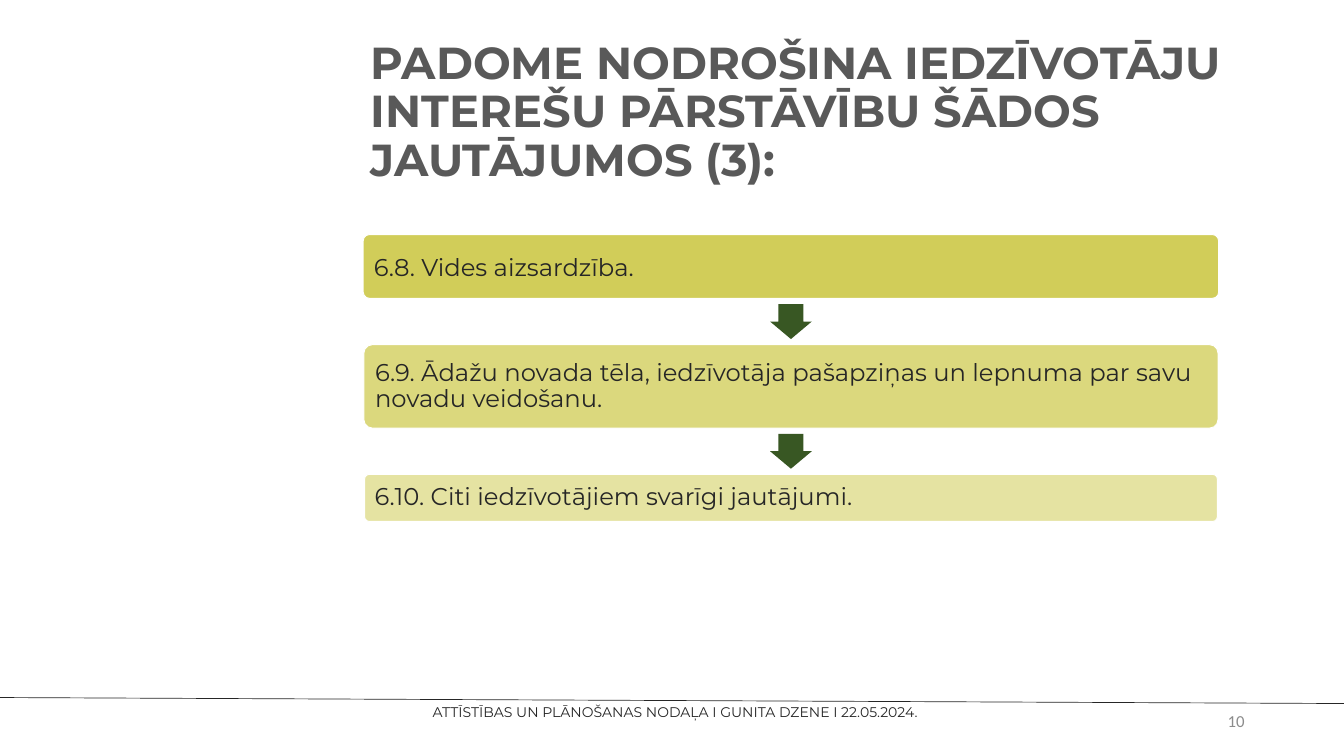
from pptx import Presentation
from pptx import util as u
from pptx.dml.color import RGBColor
from pptx.enum import shapes, text
from pptx.oxml.ns import qn
from lxml import etree

TITLE = "PADOME NODROŠINA IEDZĪVOTĀJU INTEREŠU PĀRSTĀVĪBU ŠĀDOS JAUTĀJUMOS (3):"
FOOTER = "ATTĪSTĪBAS UN PLĀNOŠANAS NODAĻA I GUNITA DZENE I 22.05.2024."
PAGE = "10"
STEPS = [
    ("6.8. Vides aizsardzība.", 12.73, 0.95, 90, 1.0),
    ("6.9. Ādažu novada tēla, iedzīvotāja pašapziņas un lepnuma par savu "
     "novadu veidošanu.", 12.71, 1.24, 70, 0.9),
    ("6.10. Citi iedzīvotājiem svarīgi jautājumi.", 12.69, 0.7, 50, 0.9),
]

OLIVE = RGBColor(0xCD, 0xC8, 0x47)
GREEN = RGBColor(0x38, 0x57, 0x23)
DARK = RGBColor(0x26, 0x26, 0x26)
GREY = RGBColor(0x59, 0x59, 0x59)
LIGHT_GREY = RGBColor(0x8C, 0x8C, 0x8C)
WHITE = RGBColor(0xFF, 0xFF, 0xFF)

CENTER, TOP, GAP = 11.77, 3.49, 0.69
ARROW_W, ARROW_H = 0.62, 0.52


def write(sp, words, size, color, align, anchor, inset=(0.1, 0.05),
          font="Montserrat", bold=False):
    tf = sp.text_frame
    tf.word_wrap = True
    tf.auto_size = text.MSO_AUTO_SIZE.NONE
    tf.vertical_anchor = anchor
    tf.margin_left = tf.margin_right = u.Inches(inset[0])
    tf.margin_top = tf.margin_bottom = u.Inches(inset[1])
    p = tf.paragraphs[0]
    p.text = words
    p.alignment = align
    p.font.name, p.font.size, p.font.bold = font, u.Pt(size), bold
    p.font.color.rgb = color
    return p


def add_shape(s, kind, x, y, w, h, color):
    sp = s.shapes.add_shape(kind, *map(u.Inches, (x, y, w, h)))
    sp.shadow.inherit = False
    sp.fill.solid()
    sp.fill.fore_color.rgb = color
    return sp


def add_step(s, y, words, w, h, opacity, spacing):
    sp = add_shape(s, shapes.MSO_SHAPE.ROUNDED_RECTANGLE, CENTER - w / 2, y, w, h, OLIVE)
    sp.adjustments[0] = 0.1
    clr = sp.fill._xPr.find(qn("a:solidFill"))[0]
    etree.SubElement(clr, qn("a:alpha"), val=str(opacity * 1000))
    sp.line.color.rgb = WHITE
    sp.line.width = u.Pt(1)
    p = write(sp, words, 26, DARK, text.PP_ALIGN.LEFT, text.MSO_ANCHOR.MIDDLE, (0.13, 0.1))
    p.line_spacing = spacing


def add_arrow(s, y):
    sp = add_shape(s, shapes.MSO_SHAPE.DOWN_ARROW, CENTER - ARROW_W / 2, y,
                   ARROW_W, ARROW_H, GREEN)
    sp.adjustments[0], sp.adjustments[1] = 0.6, 0.5
    sp.line.fill.background()


def main():
    prs = Presentation()
    prs.slide_width, prs.slide_height = u.Inches(20), u.Inches(11.25)
    s = prs.slides.add_slide(prs.slide_layouts[5])

    title = s.shapes.title
    title.left, title.top, title.width, title.height = map(u.Inches, (5.42, 0.6, 13.21, 2.17))
    p = write(title, TITLE, 48, GREY, text.PP_ALIGN.LEFT, text.MSO_ANCHOR.MIDDLE, bold=True)
    p.line_spacing = 0.9

    y = TOP
    for i, (words, w, h, opacity, spacing) in enumerate(STEPS):
        if i:
            add_arrow(s, y - (GAP + ARROW_H) / 2)
        add_step(s, y, words, w, h, opacity, spacing)
        y += h + GAP

    rule = s.shapes.add_connector(shapes.MSO_CONNECTOR.STRAIGHT,
                                  *map(u.Inches, (0, 10.38, 20.11, 10.47)))
    rule.line.color.rgb = DARK
    rule.line.width = u.Pt(0.75)
    etree.SubElement(rule._element.spPr, qn("a:effectLst"))

    footer = s.shapes.add_textbox(*map(u.Inches, (0.15, 10.47, 19.8, 0.25)))
    p = write(footer, FOOTER, 15, DARK, text.PP_ALIGN.CENTER, text.MSO_ANCHOR.TOP, (0, 0))
    p.line_spacing = u.Pt(18)

    number = s.shapes.add_textbox(*map(u.Inches, (14.12, 10.43, 4.5, 0.6)))
    write(number, PAGE, 18, LIGHT_GREY, text.PP_ALIGN.RIGHT, text.MSO_ANCHOR.MIDDLE,
          font="Calibri")

    prs.save("out.pptx")


if __name__ == "__main__":
    main()
